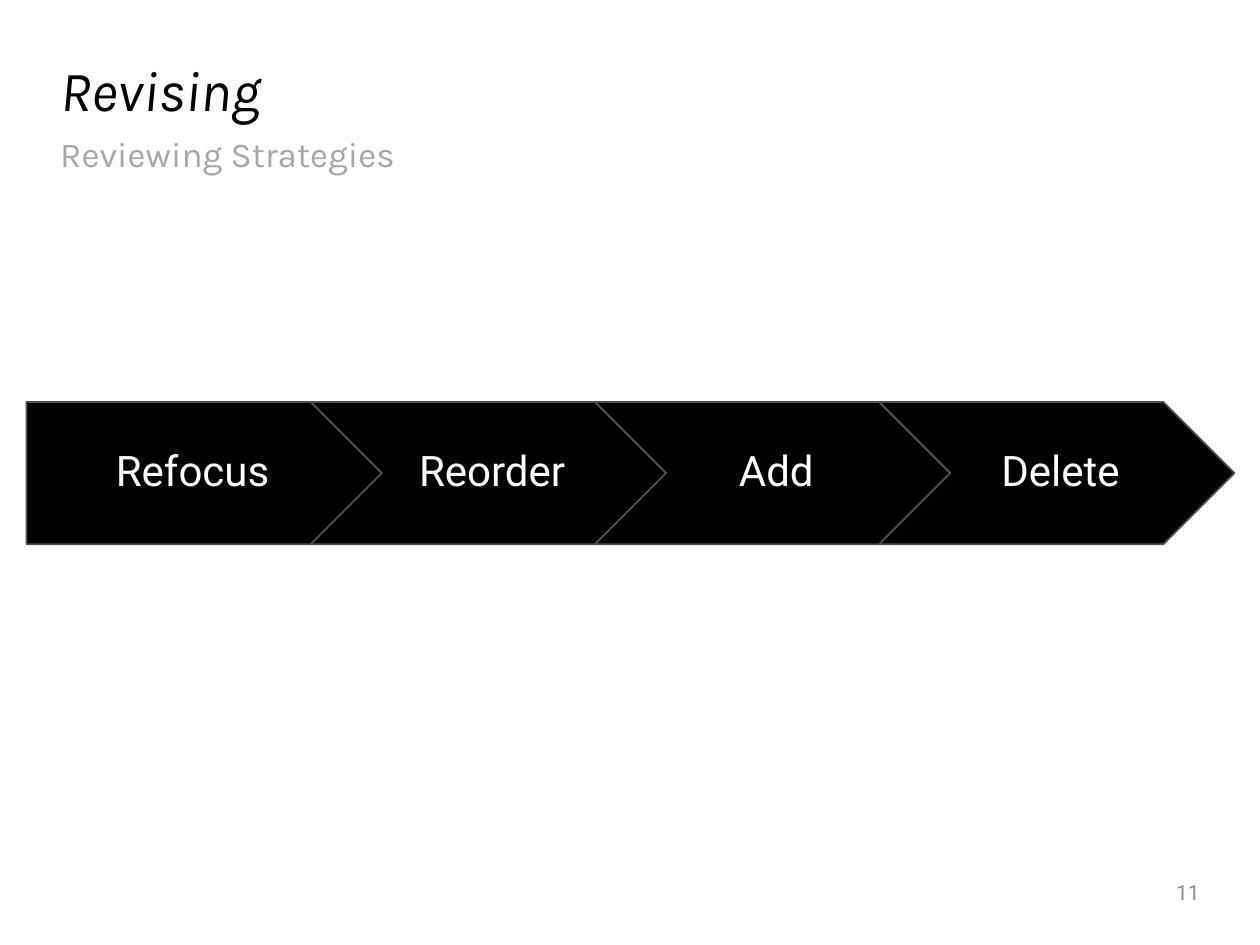
from pptx import Presentation
from pptx.dml.color import RGBColor
from pptx.enum.shapes import MSO_SHAPE as Shape
from pptx.enum.text import MSO_ANCHOR as Anchor, PP_ALIGN as Align
from pptx.util import Inches, Pt

COLORS = {
    "background": "FEFFFF",
    "black": "000000",
    "outline": "4D5056",
    "white": "FFFFFF",
    "subtitle": "A6A6A6",
    "number": "8C8C8C",
}
STEPS = ["Refocus", "Reorder", "Add", "Delete"]
ARROW_LEFT, ARROW_TOP = 0.21, 3.19
ARROW_WIDTH, ARROW_HEIGHT = 2.82, 1.13
ARROW_STEP = ARROW_WIDTH * 0.8  # each arrow overlaps the last by a fifth


def color(name):
    return RGBColor.from_string(COLORS[name])


def write(frame, text, color_name, align=Align.LEFT, spacing=0.9, **font):
    """Fill a text frame with one formatted paragraph."""
    frame.word_wrap = True
    para = frame.paragraphs[0]
    para.alignment = align
    para.line_spacing = spacing
    span = para.add_run()
    span.text = text
    for name, value in font.items():
        setattr(span.font, name, value)
    span.font.color.rgb = color(color_name)


def add_text(page, bounds, text, color_name, anchor=Anchor.MIDDLE, **style):
    box = page.shapes.add_textbox(*map(Inches, bounds))
    box.text_frame.vertical_anchor = anchor
    write(box.text_frame, text, color_name, **style)


def add_arrow(group, index, label):
    kind = Shape.CHEVRON if index else Shape.PENTAGON
    left = ARROW_LEFT + index * ARROW_STEP
    arrow = group.shapes.add_shape(
        kind, *map(Inches, (left, ARROW_TOP, ARROW_WIDTH, ARROW_HEIGHT)))
    arrow.shadow.inherit = False
    arrow.fill.solid()
    arrow.fill.fore_color.rgb = color("black")
    arrow.line.color.rgb = color("outline")
    arrow.line.width = Pt(1)

    frame = arrow.text_frame
    layout = {
        "vertical_anchor": Anchor.MIDDLE,
        "margin_left": Inches(0.1 if index else 0.14),
        "margin_right": Inches(0.04),
        "margin_top": Inches(0.07),
        "margin_bottom": Inches(0.07),
    }
    for name, value in layout.items():
        setattr(frame, name, value)
    write(frame, label, "white", align=Align.CENTER, name="Roboto", size=Pt(24))


def main():
    deck = Presentation()
    deck.slide_width, deck.slide_height = Inches(10), Inches(7.5)
    page = deck.slides.add_slide(deck.slide_layouts[6])
    page.background.fill.solid()
    page.background.fill.fore_color.rgb = color("background")

    # Heading
    add_text(page, (0.38, 0.42, 9.24, 0.64), "Revising", "black",
             name="Karla", size=Pt(32.4), italic=True)
    add_text(page, (0.38, 1.04, 9.24, 0.4), "Reviewing Strategies", "subtitle",
             anchor=Anchor.TOP, name="Karla", size=Pt(20))

    # Process arrows
    process = page.shapes.add_group_shape()
    for index, label in enumerate(STEPS):
        add_arrow(process, index, label)

    # Page number
    add_text(page, (8.42, 6.88, 1.2, 0.4), "11", "number",
             align=Align.RIGHT, spacing=1.0, name="Roboto", size=Pt(12))

    deck.save("out.pptx")


if __name__ == "__main__":
    main()
